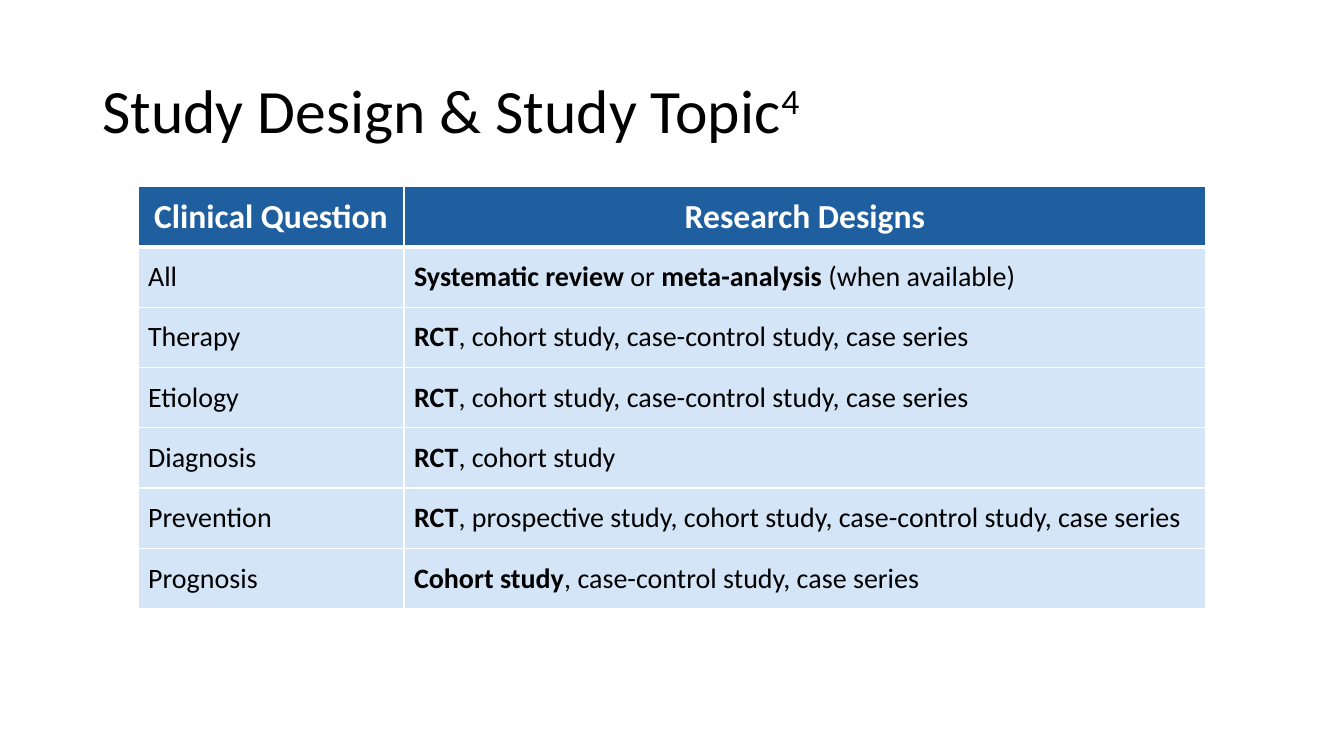
from lxml import etree
from pptx import Presentation
from pptx.dml.color import RGBColor
from pptx.enum import text
from pptx.oxml import ns
from pptx.util import Pt

# Runs are (wording, bold) pairs
TITLE, CITATION = "Study Design & Study Topic", "4"
HEADERS = ["Clinical Question", "Research Designs"]
DESIGNS = [
    ("All", [("Systematic review ", True), ("or ", False),
             ("meta-analysis", True), (" (when available)", False)]),
    ("Therapy", [("RCT", True), (", cohort study, case-control study, case series", False)]),
    ("Etiology", [("RCT", True), (", cohort study, case-control study, case series", False)]),
    ("Diagnosis", [("RCT", True), (", cohort study", False)]),
    ("Prevention", [("RCT", True),
                    (", prospective study, cohort study, case-control study, case series", False)]),
    ("Prognosis", [("Cohort study", True), (", case-control study, case series", False)]),
]

FONT = "Calibri"
BLACK = RGBColor(0x00, 0x00, 0x00)
WHITE = RGBColor(0xFF, 0xFF, 0xFF)
HEADER_BLUE = RGBColor(0x1F, 0x5F, 0xA0)
BODY_BLUE = RGBColor(0xD4, 0xE5, 0xF7)

TABLE_LEFT, TABLE_TOP = 98.6, 133.2
COLUMN_WIDTHS = [190, 572.8]
ROW_HEIGHT = 43.1


def add_run(paragraph, wording, size, color, bold=False):
    run = paragraph.add_run()
    run.text = wording
    run.font.name = FONT
    run.font.size = Pt(size)
    run.font.color.rgb = color
    run.font.bold = bold
    return run


def add_borders(cell, top, bottom):
    """Draw white cell borders; call before setting the fill, which must follow them."""
    properties = cell._tc.get_or_add_tcPr()
    for side, width in (("L", 1), ("R", 1), ("T", top), ("B", bottom)):
        line = etree.SubElement(properties, ns.qn(f"a:ln{side}"), w=str(Pt(width)))
        fill = etree.SubElement(line, ns.qn("a:solidFill"))
        etree.SubElement(fill, ns.qn("a:srgbClr"), val=str(WHITE))


def add_title(slide):
    frame = slide.shapes.add_textbox(Pt(66), Pt(28.8), Pt(828), Pt(104.4)).text_frame
    frame.word_wrap = True
    frame.vertical_anchor = text.MSO_ANCHOR.MIDDLE
    paragraph = frame.paragraphs[0]
    paragraph.line_spacing = 0.9
    add_run(paragraph, TITLE, 44, BLACK)
    citation = add_run(paragraph, CITATION, 44, BLACK)
    citation.font._element.set("baseline", "30000")


def add_design_table(slide):
    rows = [[[(header, True)] for header in HEADERS]]
    rows += [[[(question, False)], designs] for question, designs in DESIGNS]
    table = slide.shapes.add_table(
        len(rows), len(HEADERS), Pt(TABLE_LEFT), Pt(TABLE_TOP),
        Pt(sum(COLUMN_WIDTHS)), Pt(ROW_HEIGHT * len(rows))).table
    for column, width in zip(table.columns, COLUMN_WIDTHS):
        column.width = Pt(width)
    for r, row in enumerate(rows):
        table.rows[r].height = Pt(ROW_HEIGHT)
        is_header = r == 0
        size, color = (24, WHITE) if is_header else (20, BLACK)
        for c, runs in enumerate(row):
            cell = table.cell(r, c)
            cell.vertical_anchor = text.MSO_ANCHOR.MIDDLE
            add_borders(cell, top=3 if r == 1 else 1, bottom=3 if is_header else 1)
            cell.fill.solid()
            cell.fill.fore_color.rgb = HEADER_BLUE if is_header else BODY_BLUE
            paragraph = cell.text_frame.paragraphs[0]
            paragraph.alignment = text.PP_ALIGN.CENTER if is_header else text.PP_ALIGN.LEFT
            for wording, bold in runs:
                add_run(paragraph, wording, size, color, bold)


def main():
    deck = Presentation()
    deck.slide_width, deck.slide_height = Pt(960), Pt(540)
    slide = deck.slides.add_slide(deck.slide_layouts[6])
    add_title(slide)
    add_design_table(slide)
    deck.save("out.pptx")


if __name__ == "__main__":
    main()
